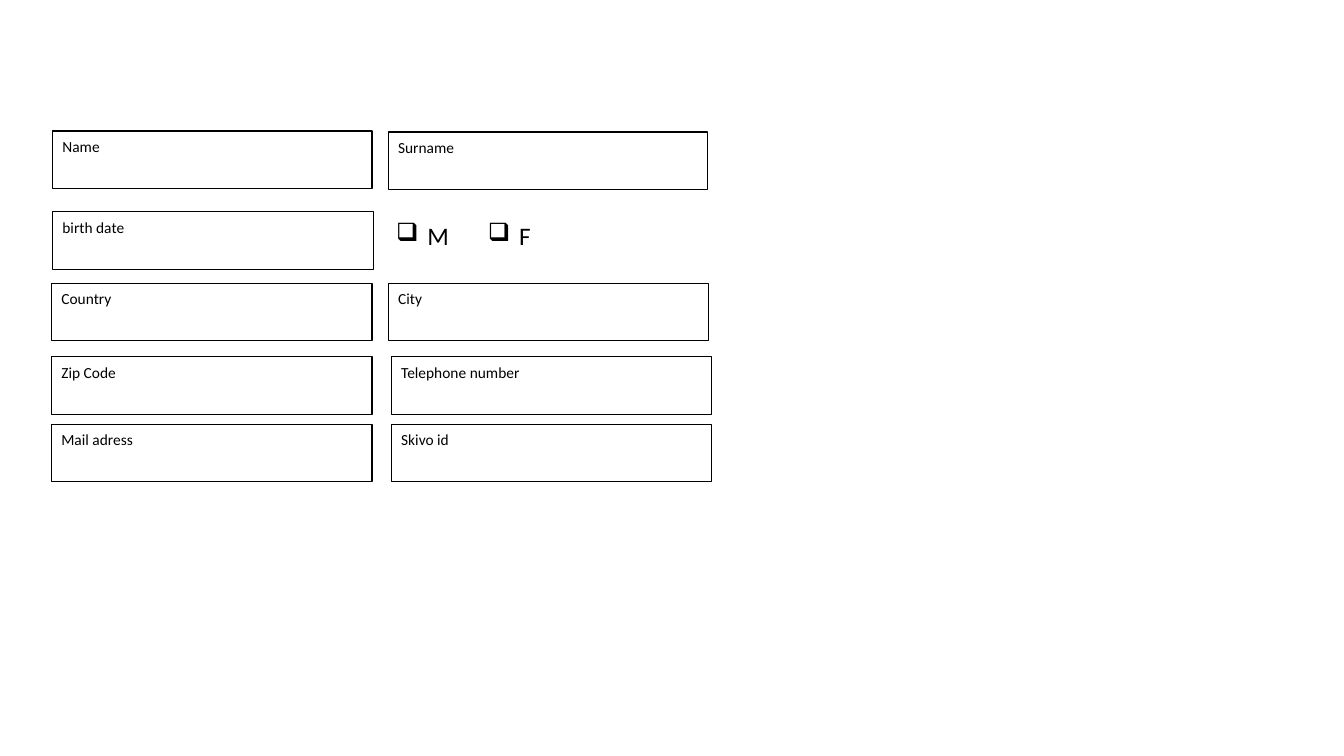
from lxml import etree
from pptx import Presentation
from pptx.dml.color import RGBColor
from pptx.enum.shapes import MSO_SHAPE
from pptx.enum.text import MSO_ANCHOR, MSO_AUTO_SIZE, PP_ALIGN
from pptx.oxml.ns import qn
from pptx.util import Pt

EMU_PER_PX = 9144
BLACK = RGBColor(0x00, 0x00, 0x00)
WHITE = RGBColor(0xFF, 0xFF, 0xFF)
RECTANGLE = MSO_SHAPE.RECTANGLE
TOP = MSO_ANCHOR.TOP
LEFT = PP_ALIGN.LEFT
FIT_SHAPE = MSO_AUTO_SIZE.SHAPE_TO_FIT_TEXT
FIELD_HEIGHT = 57
CHECK_TOP, CHECK_WIDTH, CHECK_HEIGHT, CHECK_INDENT = 214, 79, 40, 31

FIELDS = [
    ("Name", 52, 130, 317),
    ("Surname", 385, 131, 317),
    ("birth date", 52, 210, 318),
    ("Country", 51, 281, 318),
    ("City", 385, 281, 318),
    ("Zip Code", 51, 354, 318),
    ("Telephone number", 388, 354, 318),
    ("Mail adress", 51, 421, 318),
    ("Skivo id", 388, 421, 318),
]
CHECKS = [("M", 383), ("F", 474)]


def px(*lengths):
    return [length * EMU_PER_PX for length in lengths]


def write_text(frame, text, size, font, color, line_spacing=None, space_after=None):
    frame.word_wrap = True
    frame.vertical_anchor = TOP
    para = frame.paragraphs[0]
    para.alignment = LEFT
    if line_spacing is not None:
        para.line_spacing = line_spacing
    if space_after is not None:
        para.space_after = Pt(space_after)
    span = para.add_run()
    span.text = text
    span.font.size = Pt(size)
    span.font.name = font
    span.font.color.rgb = color
    return para


class FormPage:
    """Draws the fields and check boxes of a form on one slide."""

    def __init__(self, page, font="Calibri", ink=BLACK, paper=WHITE):
        self.page = page
        self.font = font
        self.ink = ink
        self.paper = paper

    def field(self, label, left, top, width):
        box = self.page.shapes.add_shape(RECTANGLE, *px(left, top, width, FIELD_HEIGHT))
        box.shadow.inherit = False
        box.fill.solid()
        box.fill.fore_color.rgb = self.paper
        box.line.color.rgb = self.ink
        box.line.width = Pt(0.75)
        write_text(box.text_frame, label, 11, self.font, self.ink,
                   line_spacing=1.07, space_after=8)

    def check(self, label, left):
        box = self.page.shapes.add_textbox(*px(left, CHECK_TOP, CHECK_WIDTH, CHECK_HEIGHT))
        para = write_text(box.text_frame, label, 18, self.font, self.ink)
        box.text_frame.auto_size = FIT_SHAPE
        indent, = px(CHECK_INDENT)
        properties = para._p.get_or_add_pPr()
        properties.set("marL", str(indent))
        properties.set("indent", str(-indent))
        etree.SubElement(properties, qn("a:buChar")).set("char", "❑")


def main():
    deck = Presentation()
    deck.slide_width, deck.slide_height = px(1333, 750)
    form = FormPage(deck.slides.add_slide(deck.slide_layouts[6]))
    for field in FIELDS:
        form.field(*field)
    for check in CHECKS:
        form.check(*check)
    deck.save("out.pptx")


if __name__ == "__main__":
    main()
